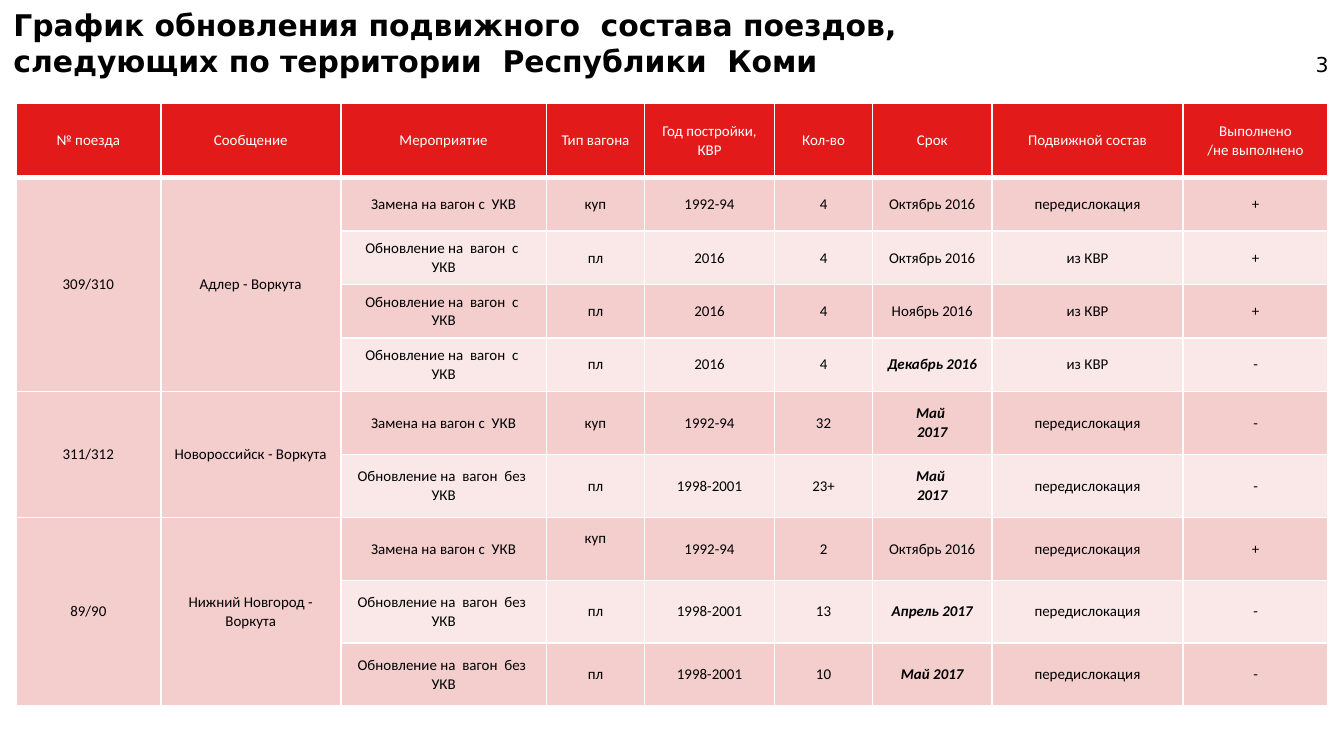
from dataclasses import dataclass

from lxml.etree import SubElement
from pptx import Presentation
from pptx.dml.color import RGBColor as RGB
from pptx.enum.text import MSO_ANCHOR as Anchor, MSO_AUTO_SIZE as AutoSize, PP_ALIGN as Align
from pptx.oxml.ns import qn
from pptx.util import Cm, Pt

COLORS = {
    "header": "E21A1A",
    "odd": "F4CDCD",
    "even": "FAE8E8",
    "text": "000000",
    "white": "FFFFFF",
}
TITLE_FONT = "DejaVu Sans"
TABLE_FONT = "Calibri"
COLUMN_WIDTHS = [2.74, 3.4, 3.89, 1.85, 2.46, 1.85, 2.26, 3.61, 2.74]
HEADER_HEIGHT = 1.4
HEADERS = [
    "№ поезда", "Сообщение", "Мероприятие", "Тип вагона", "Год постройки, КВР",
    "Кол-во", "Срок", "Подвижной состав", "Выполнено\n/не выполнено",
]
REPLACE = "Замена на вагон с  УКВ"
RENEW = "Обновление на  вагон  с  УКВ"
RENEW_PLAIN = "Обновление на  вагон  без  УКВ"
MOVED = "передислокация"
REPAIRED = "из КВР"


@dataclass
class Renewal:
    action: str
    car: str
    built: str
    count: str
    term: str
    stock: str
    done: bool = False
    emphasis: bool = False
    car_lift: float = 0

    def texts(self) -> list[str]:
        return [self.action, self.car, self.built, self.count, self.term,
                self.stock, "+" if self.done else "-"]


@dataclass
class Train:
    number: str
    route: str
    row_height: float
    renewals: list[Renewal]


TRAINS = [
    Train("309/310", "Адлер - Воркута", 1.01, [
        Renewal(REPLACE, "куп", "1992-94", "4", "Октябрь 2016", MOVED, done=True),
        Renewal(RENEW, "пл", "2016", "4", "Октябрь 2016", REPAIRED, done=True),
        Renewal(RENEW, "пл", "2016", "4", "Ноябрь 2016", REPAIRED, done=True),
        Renewal(RENEW, "пл", "2016", "4", "Декабрь 2016", REPAIRED, emphasis=True),
    ]),
    Train("311/312", "Новороссийск - Воркута", 1.19, [
        Renewal(REPLACE, "куп", "1992-94", "32", "Май \n2017", MOVED, emphasis=True),
        Renewal(RENEW_PLAIN, "пл", "1998-2001", "23+", "Май \n2017", MOVED, emphasis=True),
    ]),
    Train("89/90", "Нижний Новгород - Воркута", 1.19, [
        Renewal(REPLACE, "куп", "1992-94", "2", "Октябрь 2016", MOVED, done=True, car_lift=0.38),
        Renewal(RENEW_PLAIN, "пл", "1998-2001", "13", "Апрель 2017", MOVED, emphasis=True),
        Renewal(RENEW_PLAIN, "пл", "1998-2001", "10", "Май 2017", MOVED, emphasis=True),
    ]),
]


def add_run(p, text: str, font: str, size: float, color: str,
            bold: bool = False, italic: bool = False) -> None:
    r = p.add_run()
    r.text = text
    r.font.name = font
    r.font.size = Pt(size)
    r.font.bold = bold
    r.font.italic = italic
    r.font.color.rgb = RGB.from_string(COLORS[color])


def add_title(s) -> None:
    sp = s.shapes.title
    sp.left, sp.top, sp.width, sp.height = Cm(0), Cm(0), Cm(25.4), Cm(1.63)
    tf = sp.text_frame
    tf.word_wrap = True
    tf.auto_size = AutoSize.NONE
    tf.vertical_anchor = Anchor.TOP
    first, second = tf.paragraphs[0], tf.add_paragraph()
    tabs = SubElement(second._p.get_or_add_pPr(), qn("a:tabLst"))
    SubElement(tabs, qn("a:tab"), pos=str(Cm(24.86)), algn="r")
    first.alignment = second.alignment = Align.LEFT
    add_run(first, "График обновления подвижного  состава поездов,", TITLE_FONT, 16, "text", bold=True)
    add_run(second, "следующих по территории  Республики  Коми", TITLE_FONT, 16, "text", bold=True)
    add_run(second, "\t3", TITLE_FONT, 11, "text")


def style_cell(cell, fill: str, bottom: float = 1) -> None:
    tc_pr = cell._tc.get_or_add_tcPr()
    for side, width in (("L", 1), ("R", 1), ("T", 1), ("B", bottom)):
        line = SubElement(tc_pr, qn(f"a:ln{side}"), w=str(Pt(width)))
        solid = SubElement(line, qn("a:solidFill"))
        SubElement(solid, qn("a:srgbClr"), val=COLORS["white"])
    cell.fill.solid()
    cell.fill.fore_color.rgb = RGB.from_string(COLORS[fill])
    cell.vertical_anchor = Anchor.MIDDLE
    cell.margin_left = cell.margin_right = Cm(0.25)
    cell.margin_top = cell.margin_bottom = Cm(0.1)


def write_cell(cell, text: str, color: str = "text", emphasis: bool = False) -> None:
    tf = cell.text_frame
    for i, line in enumerate(text.split("\n")):
        p = tf.add_paragraph() if i else tf.paragraphs[0]
        p.alignment = Align.CENTER
        add_run(p, line, TABLE_FONT, 8, color, emphasis, emphasis)


def add_schedule(s) -> None:
    heights = [HEADER_HEIGHT] + [t.row_height for t in TRAINS for _ in t.renewals]
    frame = s.shapes.add_table(len(heights), len(COLUMN_WIDTHS), Cm(0.3), Cm(1.96),
                               Cm(sum(COLUMN_WIDTHS)), Cm(sum(heights)))
    table = frame.table
    for column, width in zip(table.columns, COLUMN_WIDTHS):
        column.width = Cm(width)
    for row, height in zip(table.rows, heights):
        row.height = Cm(height)

    for cell, text in zip(table.rows[0].cells, HEADERS):
        style_cell(cell, "header", bottom=3)
        write_cell(cell, text, "white")

    top = 1
    for train in TRAINS:
        for row, renewal in enumerate(train.renewals, top):
            for col in range(len(COLUMN_WIDTHS)):
                style_cell(table.cell(row, col), "odd" if col < 2 or row % 2 else "even")
            for col, text in enumerate(renewal.texts(), 2):
                write_cell(table.cell(row, col), text, emphasis=renewal.emphasis and col == 6)
            table.cell(row, 3).margin_bottom = Cm(0.1 + renewal.car_lift)
        bottom = top + len(train.renewals) - 1
        for col, text in enumerate((train.number, train.route)):
            table.cell(top, col).merge(table.cell(bottom, col))
            write_cell(table.cell(top, col), text)
        top = bottom + 1


def main() -> None:
    prs = Presentation()
    prs.slide_width, prs.slide_height = Cm(25.4), Cm(14.29)
    s = prs.slides.add_slide(prs.slide_layouts[5])
    add_title(s)
    add_schedule(s)
    prs.save("out.pptx")


if __name__ == "__main__":
    main()
